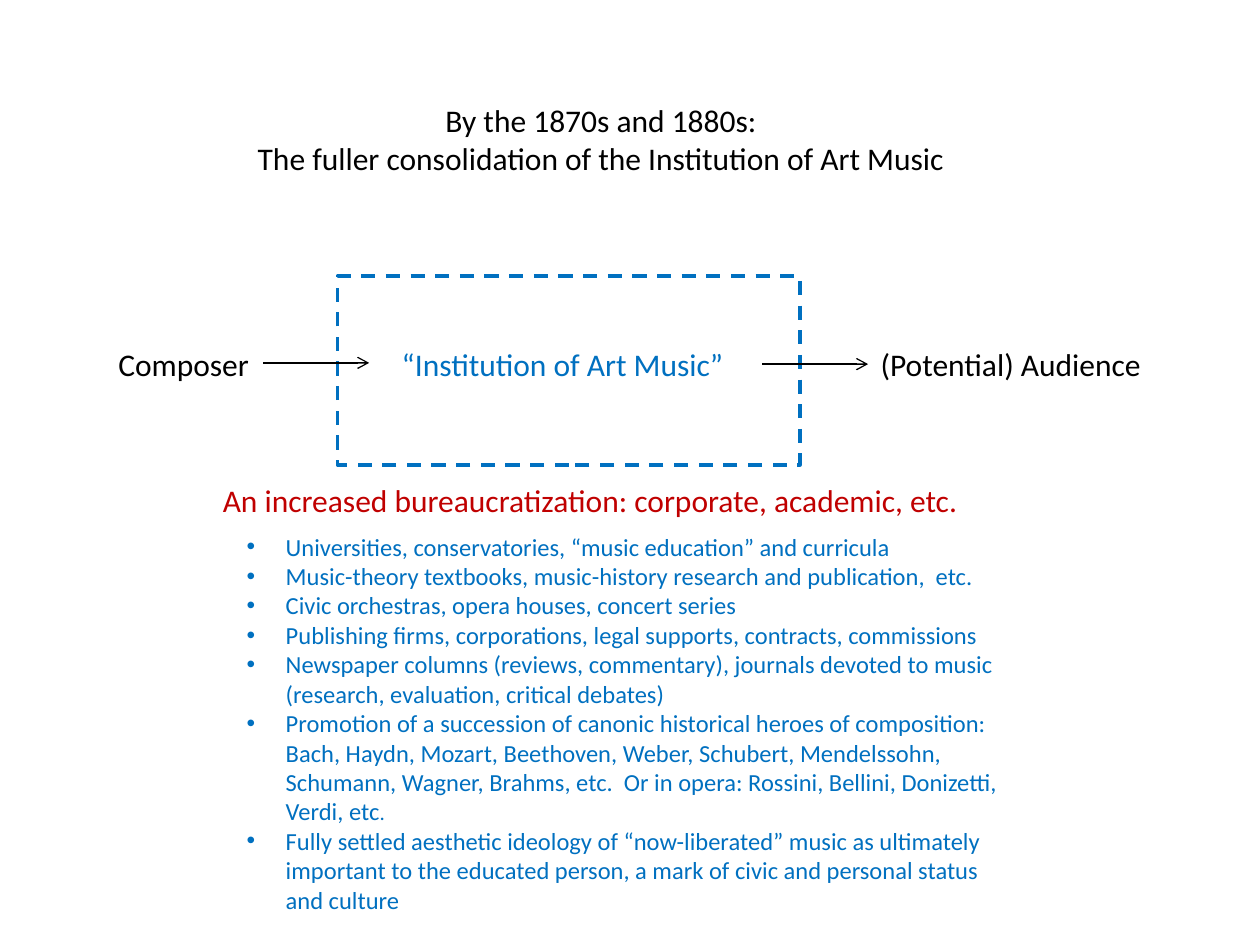
from lxml import etree
from pptx import Presentation
from pptx.dml.color import RGBColor
from pptx.enum.dml import MSO_LINE
from pptx.enum.shapes import MSO_CONNECTOR, MSO_SHAPE
from pptx.enum.text import MSO_ANCHOR, MSO_AUTO_SIZE, PP_ALIGN
from pptx.oxml.ns import qn
from pptx.util import Inches, Pt

BLACK = RGBColor(0x00, 0x00, 0x00)
BLUE = RGBColor(0x00, 0x70, 0xC0)
RED = RGBColor(0xC0, 0x00, 0x00)
FONT = "Calibri"
DASH = MSO_LINE.DASH
STRAIGHT = MSO_CONNECTOR.STRAIGHT
RECTANGLE = MSO_SHAPE.RECTANGLE
TOP = MSO_ANCHOR.TOP
NO_AUTOFIT = MSO_AUTO_SIZE.NONE
LEFT, CENTER = PP_ALIGN.LEFT, PP_ALIGN.CENTER
TITLE_ONLY = 5

TITLE_LINES = [
    "By the 1870s and 1880s:",
    "The fuller consolidation of the Institution of Art Music",
]
# Each bullet is a list of (text, size) runs
BULLETS = [
    [("Universities, conservatories, “music education” and curricula", 14)],
    [("Music-theory textbooks, music-history research and publication,  etc.", 14)],
    [("Civic orchestras, opera houses, concert series", 14)],
    [("Publishing firms, corporations, legal supports, contracts, commissions", 14)],
    [("Newspaper columns (reviews, commentary), journals devoted to music "
      "(research, evaluation, critical debates)", 14)],
    [("Promotion of a succession of canonic historical heroes of composition: "
      "Bach, Haydn, Mozart, Beethoven, Weber, Schubert, Mendelssohn, Schumann, "
      "Wagner, Brahms, etc.  Or in opera: Rossini, Bellini, Donizetti, Verdi, etc", 14),
     (".", 12)],
    [("Fully settled aesthetic ideology of “now-liberated” music as ultimately "
      "important to the educated person, a mark of civic and personal status "
      "and culture", 14)],
]


def add_bullet(paragraph, indent):
    properties = paragraph._p.get_or_add_pPr()
    properties.set("marL", str(indent))
    properties.set("indent", str(-indent))
    etree.SubElement(properties, qn("a:buFont")).set("typeface", "Arial")
    etree.SubElement(properties, qn("a:buChar")).set("char", "•")


def write_text(shape, paragraphs, color=BLACK, align=LEFT, bullet_indent=None):
    """Fill a shape with paragraphs, each a list of (text, size) runs."""
    frame = shape.text_frame
    frame.word_wrap = True
    frame.auto_size = NO_AUTOFIT
    frame.vertical_anchor = TOP
    for index, runs in enumerate(paragraphs):
        paragraph = frame.add_paragraph() if index else frame.paragraphs[0]
        paragraph.alignment = align
        if bullet_indent:
            add_bullet(paragraph, bullet_indent)
        for text, size in runs:
            run = paragraph.add_run()
            run.text = text
            run.font.name = FONT
            run.font.size = Pt(size)
            run.font.color.rgb = color


def add_label(slide, text, left, top, width, color=BLACK):
    box = slide.shapes.add_textbox(left, top, width, Inches(0.4))
    write_text(box, [[(text, 18)]], color=color)


def add_arrow(slide, left, y, length):
    arrow = slide.shapes.add_connector(STRAIGHT, left, y, left + length, y)
    arrow.line.color.rgb = BLACK
    arrow.line.width = Pt(0.75)
    etree.SubElement(arrow.line._get_or_add_ln(), qn("a:tailEnd")).set("type", "arrow")
    etree.SubElement(arrow._element.spPr, qn("a:effectLst"))


def place_title(slide, left, top, width, height):
    title = slide.shapes.title
    title.left, title.top, title.width, title.height = left, top, width, height
    write_text(title, [[(line, 18)] for line in TITLE_LINES], align=CENTER)


def add_institution_diagram(slide, left, top, width, height):
    # Dashed frame of the institution
    frame = slide.shapes.add_shape(
        RECTANGLE, left + Inches(1.84), top, Inches(3.67), height)
    frame.shadow.inherit = False
    frame.fill.background()
    frame.line.color.rgb = BLUE
    frame.line.width = Pt(2)
    frame.line.dash_style = DASH

    # Composer, institution and audience in one row
    row_top = top + Inches(0.5)
    audience_width = Inches(2.29)
    audience_left = left + width - audience_width
    add_label(slide, "Composer", left, row_top, Inches(1.29))
    add_label(slide, "(Potential) Audience", audience_left, row_top, audience_width)
    add_label(slide, "“Institution of Art Music”", left + Inches(2.25), row_top,
              Inches(3.1), color=BLUE)

    # Arrows crossing the frame
    arrow_length = Inches(0.84)
    add_arrow(slide, left + Inches(1.25), top + Inches(0.69), arrow_length)
    add_arrow(slide, audience_left - arrow_length, top + Inches(0.7), arrow_length)


def add_bureaucratization_list(slide, left, top, width, height):
    heading_height = Inches(0.4)
    add_label(slide, "An increased bureaucratization: corporate, academic, etc.",
              left, top, Inches(6.2), color=RED)
    box = slide.shapes.add_textbox(
        left + Inches(0.19), top + heading_height,
        width - Inches(0.19), height - heading_height)
    write_text(box, BULLETS, color=BLUE, bullet_indent=Inches(0.31))


def main():
    presentation = Presentation()
    presentation.slide_width = Inches(10)
    presentation.slide_height = Inches(7.5)
    slide = presentation.slides.add_slide(presentation.slide_layouts[TITLE_ONLY])
    place_title(slide, Inches(1.31), Inches(0.75), Inches(6.92), Inches(0.71))
    add_institution_diagram(slide, Inches(0.84), Inches(2.19), Inches(8.34), Inches(1.5))
    add_bureaucratization_list(slide, Inches(1.67), Inches(3.77), Inches(6.36), Inches(3.56))
    presentation.save("out.pptx")


if __name__ == "__main__":
    main()
